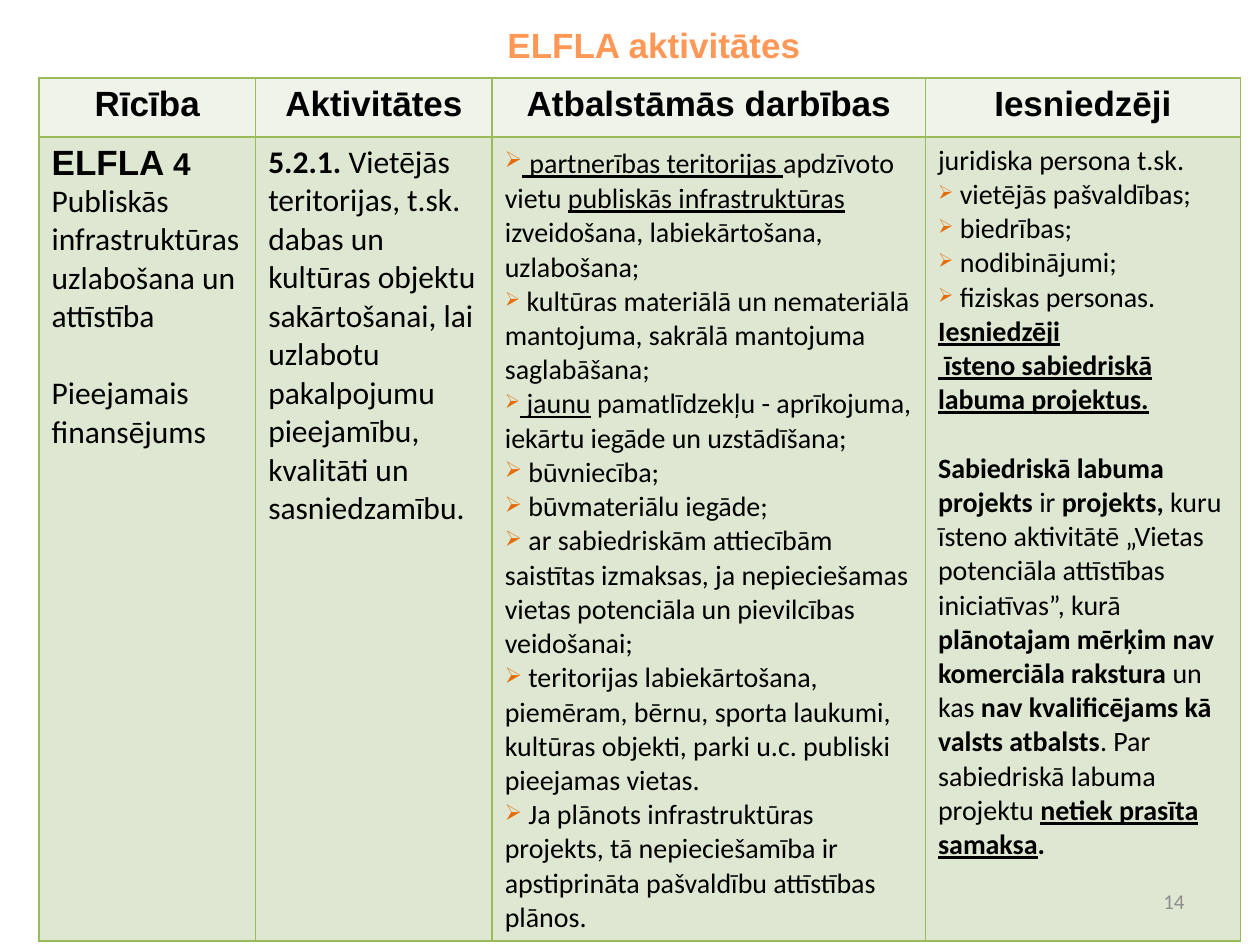
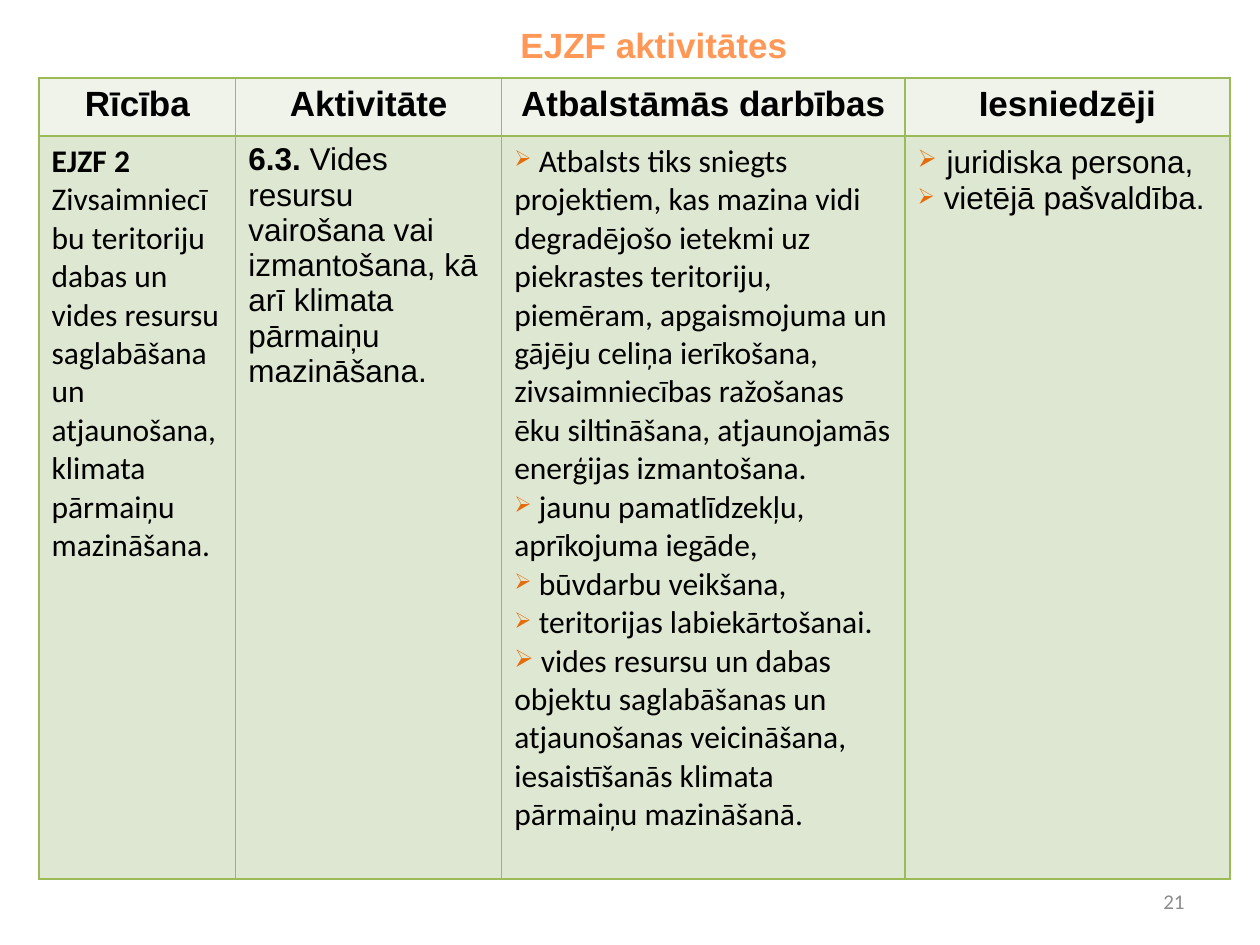
from dataclasses import dataclass, replace

from lxml.etree import SubElement
from pptx import Presentation
from pptx.dml.color import RGBColor
from pptx.enum.text import MSO_ANCHOR, PP_ALIGN
from pptx.oxml.ns import qn
from pptx.util import Pt

ORANGE = "FF9856"
BULLET_ORANGE = "E46C0A"
BLACK = "000000"
GREY = "8C8C8C"
BORDER_GREEN = "9BBB59"
HEADER_GREEN = "EFF3EA"
BODY_GREEN = "DEE7D1"
TABLE_LEFT, TABLE_TOP = 22.3, 44.6


@dataclass(frozen=True)
class Span:
    """A stretch of text with one format."""
    text: str
    bold: bool = False
    underline: bool = False
    size: float = 0
    font: str = ""


@dataclass(frozen=True)
class Line:
    """A paragraph with an optional bullet size in percent."""
    spans: tuple[Span, ...]
    bullet: int = 0
    before: float = 0


@dataclass(frozen=True)
class Column:
    """A table column with its heading and body text."""
    heading: str
    width: float
    lines: tuple[Line, ...]
    size: float = 18
    font: str = "Calibri"


@dataclass(frozen=True)
class ActivityPage:
    """A page with one table of supported activities."""
    title: str
    number: int
    header_height: float
    body_height: float
    columns: tuple[Column, ...]


def plain(text: str, bullet: int = 0) -> Line:
    """Make a paragraph of one unformatted span."""
    return Line((Span(text),), bullet)


def bullets(percent: int, *texts: str) -> tuple[Line, ...]:
    """Make one bulleted paragraph for each text."""
    return tuple(plain(f" {text}", percent) for text in texts)


def rgb(value: str) -> RGBColor:
    """Turn a hex string into a colour."""
    return RGBColor.from_string(value)


def add_text(para, text: str, *, size: float, font: str = "Calibri", color: str = BLACK,
             bold: bool = False, underline: bool = False) -> None:
    """Add formatted text to a paragraph."""
    run = para.add_run()
    run.text = text
    run.font.size = Pt(size)
    run.font.name = font
    run.font.bold = bold
    run.font.underline = underline
    run.font.color.rgb = rgb(color)


def add_bullet(para, percent: int) -> None:
    """Give a paragraph an orange arrow bullet."""
    properties = para._p.get_or_add_pPr()
    properties.set("marL", "0")
    properties.set("indent", "0")
    color = SubElement(properties, qn("a:buClr"))
    SubElement(color, qn("a:srgbClr"), val=BULLET_ORANGE)
    SubElement(properties, qn("a:buSzPct"), val=str(percent * 1000))
    SubElement(properties, qn("a:buChar"), char="➢")


def add_box(page, text: str, left: float, top: float, width: float, height: float,
            align: PP_ALIGN, **style) -> None:
    """Add a text box with one vertically centred paragraph."""
    box = page.shapes.add_textbox(Pt(left), Pt(top), Pt(width), Pt(height))
    frame = box.text_frame
    frame.word_wrap = True
    frame.vertical_anchor = MSO_ANCHOR.MIDDLE
    para = frame.paragraphs[0]
    para.alignment = align
    add_text(para, text, **style)


def paint_cell(cell, fill: str) -> None:
    """Fill a cell and draw its four borders."""
    cell.fill.solid()
    cell.fill.fore_color.rgb = rgb(fill)
    properties = cell._tc.get_or_add_tcPr()
    for index, side in enumerate(("lnL", "lnR", "lnT", "lnB")):
        border = SubElement(properties, qn(f"a:{side}"), w=str(Pt(1)))
        solid = SubElement(border, qn("a:solidFill"))
        SubElement(solid, qn("a:srgbClr"), val=BORDER_GREEN)
        properties.insert(index, border)


def fill_body(cell, column: Column) -> None:
    """Write the body paragraphs of a column."""
    frame = cell.text_frame
    for index, line in enumerate(column.lines):
        para = frame.paragraphs[0] if index == 0 else frame.add_paragraph()
        if line.before:
            para.space_before = Pt(line.before)
        if line.bullet:
            add_bullet(para, line.bullet)
        for span in line.spans:
            add_text(para, span.text, size=span.size or column.size,
                     font=span.font or column.font, bold=span.bold, underline=span.underline)


def add_activity_table(page, content: ActivityPage) -> None:
    """Add the table with its heading row and body row."""
    width = sum(column.width for column in content.columns)
    height = content.header_height + content.body_height
    table = page.shapes.add_table(2, len(content.columns), Pt(TABLE_LEFT), Pt(TABLE_TOP),
                                  Pt(width), Pt(height)).table
    table.first_row = table.horz_banding = False
    table.rows[0].height = Pt(content.header_height)
    table.rows[1].height = Pt(content.body_height)
    for index, column in enumerate(content.columns):
        table.columns[index].width = Pt(column.width)
        header, body = table.cell(0, index), table.cell(1, index)
        paint_cell(header, HEADER_GREEN)
        paint_cell(body, BODY_GREEN)
        para = header.text_frame.paragraphs[0]
        para.alignment = PP_ALIGN.CENTER
        add_text(para, column.heading, size=20, font="Arial", bold=True)
        fill_body(body, column)


def add_page(deck, content: ActivityPage) -> None:
    """Add a page with title, table and page number."""
    page = deck.slides.add_slide(deck.slide_layouts[6])
    add_box(page, content.title, 67.7, 11.5, 612, 28, PP_ALIGN.CENTER,
            size=20, font="Arial", color=ORANGE, bold=True)
    add_activity_table(page, content)
    add_box(page, str(content.number), 516, 500.5, 168, 28.8, PP_ALIGN.RIGHT,
            size=12, color=GREY)


RURAL_ACTION = (
    Line((Span("ELFLA ", bold=True, size=20, font="Arial"),
          Span("4", bold=True, font="Arial"))),
    plain("Publiskās infrastruktūras uzlabošana un attīstība"),
    replace(plain("Pieejamais finansējums"), before=22),
)
RURAL_ACTIVITY = (
    Line((Span("5.2.1. ", bold=True),
          Span("Vietējās teritorijas, t.sk. dabas un kultūras objektu sakārtošanai, lai "
               "uzlabotu pakalpojumu pieejamību, kvalitāti un sasniedzamību."))),
)
RURAL_SUPPORT = (
    Line((Span(" ", underline=True, size=18),
          Span("partnerības teritorijas ", underline=True),
          Span("apdzīvoto vietu "),
          Span("publiskās infrastruktūras ", underline=True),
          Span("izveidošana, labiekārtošana, uzlabošana;")), 70),
    *bullets(70, "kultūras materiālā un nemateriālā mantojuma, sakrālā mantojuma saglabāšana;"),
    Line((Span(" jaunu", underline=True),
          Span(" pamatlīdzekļu - aprīkojuma, iekārtu iegāde un uzstādīšana;")), 70),
    *bullets(
        78,
        "būvniecība;",
        "būvmateriālu iegāde;",
        "ar sabiedriskām attiecībām saistītas izmaksas, ja nepieciešamas vietas potenciāla "
        "un pievilcības veidošanai;",
        "teritorijas labiekārtošana, piemēram, bērnu, sporta laukumi, kultūras objekti, "
        "parki u.c. publiski pieejamas vietas.",
        "Ja plānots infrastruktūras projekts, tā nepieciešamība ir apstiprināta pašvaldību "
        "attīstības plānos.",
    ),
)
RURAL_APPLICANTS = (
    plain("juridiska persona t.sk."),
    *bullets(70, "vietējās pašvaldības;", "biedrības;", "nodibinājumi;", "fiziskas personas."),
    Line((Span("Iesniedzēji", bold=True, underline=True),)),
    Line((Span(" īsteno sabiedriskā labuma projektus.", bold=True, underline=True),)),
    Line((Span("Sabiedriskā labuma projekts", bold=True),
          Span(" ir "),
          Span("projekts,", bold=True),
          Span(" kuru īsteno aktivitātē „Vietas potenciāla attīstības iniciatīvas”, kurā "),
          Span("plānotajam mērķim nav komerciāla rakstura ", bold=True),
          Span("un kas "),
          Span("nav kvalificējams kā valsts atbalsts", bold=True),
          Span(". Par sabiedriskā labuma projektu "),
          Span("netiek prasīta samaksa", bold=True, underline=True),
          Span(".", bold=True)), before=19.5),
)
FISHERY_ACTION = (
    Line((Span("EJZF 2 ", bold=True),
          Span("Zivsaimniecību teritoriju dabas un vides resursu saglabāšana un "
               "atjaunošana, klimata pārmaiņu mazināšana."))),
)
FISHERY_ACTIVITY = (
    Line((Span("6.3. ", bold=True),
          Span("Vides resursu vairošana vai izmantošana, kā arī klimata pārmaiņu "
               "mazināšana."))),
)
FISHERY_SUPPORT = (
    *bullets(
        70,
        "Atbalsts tiks sniegts projektiem, kas mazina vidi degradējošo ietekmi uz piekrastes "
        "teritoriju, piemēram, apgaismojuma un gājēju celiņa ierīkošana, zivsaimniecības "
        "ražošanas ēku siltināšana, atjaunojamās enerģijas izmantošana.",
        "jaunu pamatlīdzekļu, aprīkojuma iegāde,",
        "būvdarbu veikšana,",
        "teritorijas labiekārtošanai.",
    ),
    *bullets(78, "vides resursu un dabas objektu saglabāšanas un atjaunošanas veicināšana, "
                 "iesaistīšanās klimata pārmaiņu mazināšanā."),
)
FISHERY_APPLICANTS = (
    Line((Span(" ", size=20), Span("juridiska persona,")), 70),
    *bullets(70, "vietējā pašvaldība."),
)

PAGES = (
    ActivityPage("ELFLA aktivitātes", 14, 33.8, 459.4, (
        Column("Rīcība", 123.8, RURAL_ACTION),
        Column("Aktivitātes", 135.2, RURAL_ACTIVITY),
        Column("Atbalstāmās darbības", 247.6, RURAL_SUPPORT, size=16),
        Column("Iesniedzēji", 180, RURAL_APPLICANTS, size=16),
    )),
    ActivityPage("EJZF aktivitātes", 21, 33.1, 424.6, (
        Column("Rīcība", 112.4, FISHERY_ACTION),
        Column("Aktivitāte", 152, FISHERY_ACTIVITY, font="Arial"),
        Column("Atbalstāmās darbības", 230.4, FISHERY_SUPPORT),
        Column("Iesniedzēji", 185.8, FISHERY_APPLICANTS, font="Arial"),
    )),
)


def main() -> None:
    """Build and save the deck."""
    deck = Presentation()
    deck.slide_width, deck.slide_height = Pt(720), Pt(540)
    for content in PAGES:
        add_page(deck, content)
    deck.save("out.pptx")


if __name__ == "__main__":
    main()
